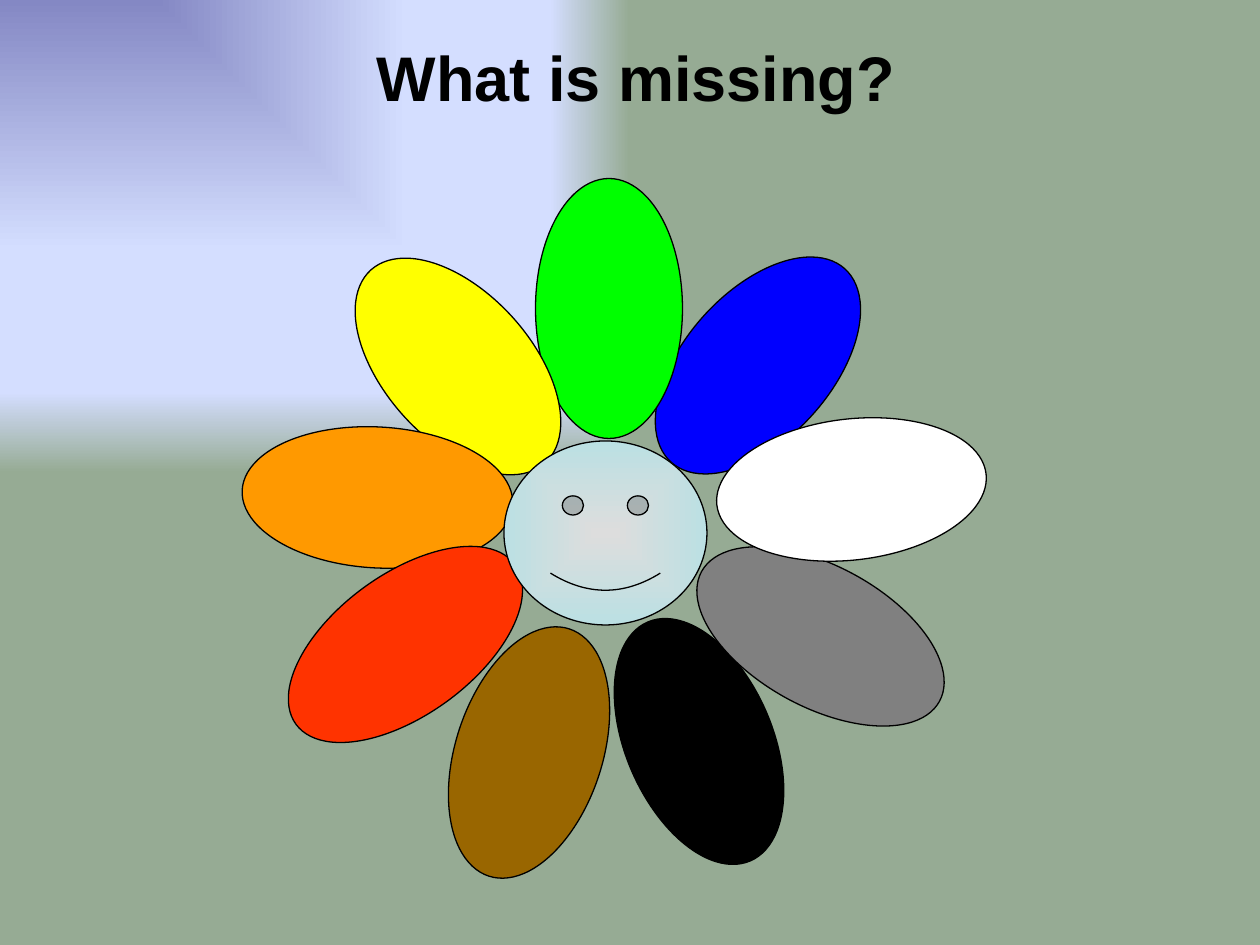
"""Build a slide with a smiling flower of coloured petals and a question."""
from lxml.etree import SubElement
from pptx import Presentation
from pptx.dml.color import RGBColor
from pptx.enum.shapes import MSO_SHAPE
from pptx.enum.text import MSO_ANCHOR, PP_ALIGN
from pptx.oxml import parse_xml
from pptx.oxml.ns import nsdecls, qn
from pptx.util import Pt

PX = 914400 // 126
C = {
    "brown": "996600", "blue": "0000FF", "green": "00FF00",
    "yellow": "FFFF00", "orange": "FF9900", "red": "FF3300",
    "black": "000000", "gray": "808080", "white": "FFFFFF",
    "violet": "8488C4", "sky": "D4DEFF", "sage": "96AB94",
    "silver": "DDDDDD", "aqua": "BBE0E3", "text": "FF0000",
}


def gradient(stops, path, rect):
    gs = "".join(
        f'<a:gs pos="{pos * 1000}"><a:srgbClr val="{C[name]}"/></a:gs>'
        for pos, name in stops)
    to = " ".join(f'{side}="{v * 1000}"' for side, v in zip("ltrb", rect))
    return parse_xml(
        f'<a:gradFill {nsdecls("a")} rotWithShape="1"><a:gsLst>{gs}</a:gsLst>'
        f'<a:path path="{path}"><a:fillToRect {to}/></a:path></a:gradFill>')


def add_outlined(kind, x, y, w, h, color):
    sp = s.shapes.add_shape(kind, x * PX, y * PX, w * PX, h * PX)
    sp.shadow.inherit = False
    sp.fill.solid()
    sp.fill.fore_color.rgb = RGBColor.from_string(C[color])
    sp.line.color.rgb = RGBColor.from_string(C["black"])
    sp.line.width = Pt(0.75)
    return sp


prs = Presentation()
prs.slide_width, prs.slide_height = 1260 * PX, 945 * PX
s = prs.slides.add_slide(prs.slide_layouts[6])

s.background.fill.solid()
bg = next(s.element.iter(qn("p:bgPr")))
bg.replace(bg[0], gradient(
    [(0, "violet"), (53, "sky"), (83, "sky"), (100, "sage")],
    "rect", (0, 0, 100, 100)))

NARROW, LONG = (260, 147), (271, 141)
petals = [
    ("brown", 399, 679, NARROW, 108),
    ("blue", 628, 292, NARROW, 311.9),
    ("green", 479, 235, NARROW, 270),
    ("yellow", 328, 293, NARROW, 47.9),
    ("orange", 242, 427, LONG, 3.1),
    ("red", 270, 574, LONG, 323.9),
    ("black", 569, 668, NARROW, 66.8),
    ("gray", 685, 566, LONG, 28.6),
    ("white", 716, 419, LONG, 353.4),
]
for color, x, y, (w, h), angle in petals:
    sp = add_outlined(MSO_SHAPE.OVAL, x, y, w, h, color)
    sp.rotation = angle

face = add_outlined(MSO_SHAPE.SMILEY_FACE, 504, 441, 203, 184, "aqua")
face.adjustments[0] = 0.047
spPr = face.element.spPr
spPr.replace(spPr.find(qn("a:solidFill")), gradient(
    [(0, "silver"), (100, "aqua")], "shape", (50, 50, 50, 50)))

tb = s.shapes.add_textbox(368 * PX, 32 * PX, 536 * PX, 116 * PX)
tf = tb.text_frame
tf.word_wrap = False
tf.vertical_anchor = MSO_ANCHOR.TOP
tf.margin_left = tf.margin_right = 0
p = tf.paragraphs[0]
p.alignment = PP_ALIGN.CENTER
r = p.add_run()
r.text = "What is missing?"
r.font.name, r.font.size, r.font.bold = "Arial", Pt(36), True
r.font.color.rgb = RGBColor.from_string(C["text"])
rPr = r.font._element
SubElement(next(rPr.iter(qn("a:srgbClr"))), qn("a:alpha"), val="50000")
rPr.insert(0, parse_xml(
    f'<a:ln {nsdecls("a")} w="12700"><a:solidFill>'
    f'<a:srgbClr val="{C["black"]}"/></a:solidFill></a:ln>'))

prs.save("out.pptx")
